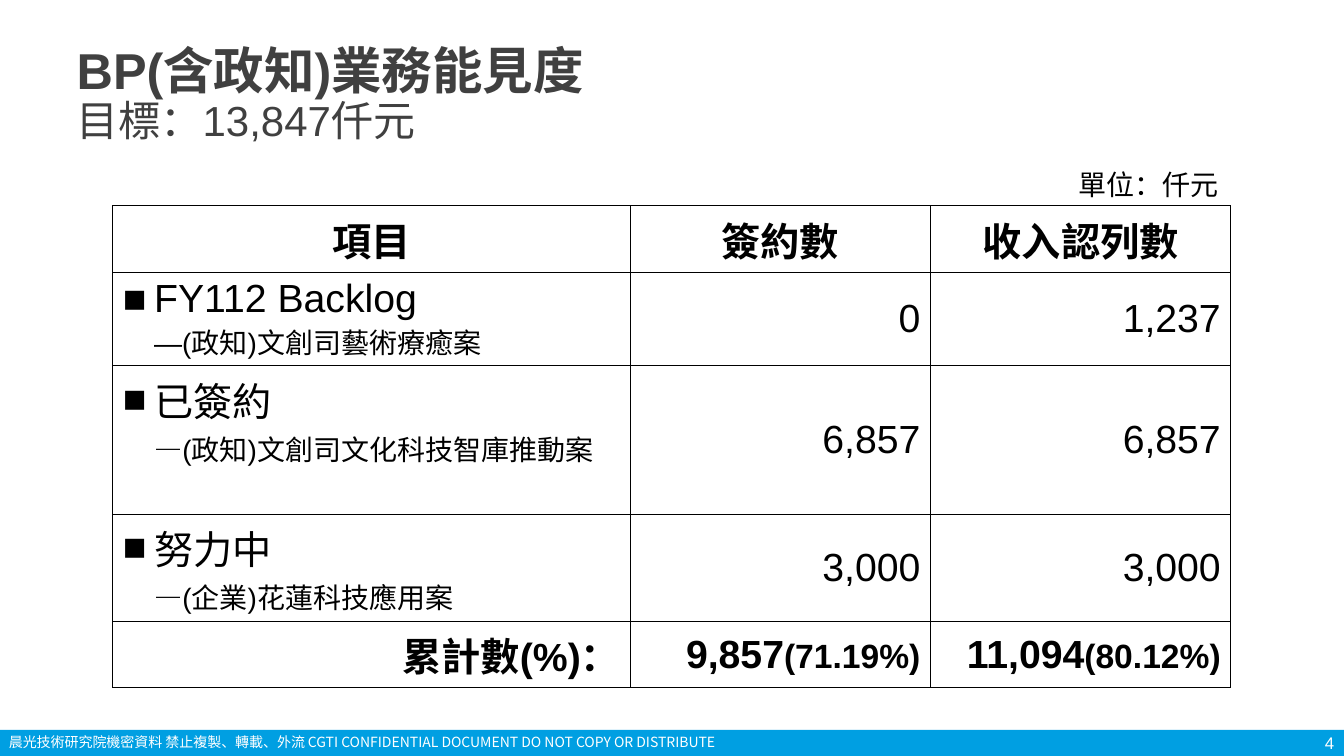
from lxml import etree
from pptx import Presentation, util as u
from pptx.dml.color import RGBColor
from pptx.enum import shapes, text
from pptx.oxml import ns

ALIGN = text.PP_ALIGN
ANCHOR = text.MSO_ANCHOR
BLACK, WHITE, GREY, BLUE = "000000", "FFFFFF", "404040", "009FE2"


def color(value):
    return RGBColor.from_string(value)


class SlideBuilder:
    """Places elements by percentages of the slide's width and height."""

    font = "Arial"

    def __init__(self, presentation):
        self.width = presentation.slide_width
        self.height = presentation.slide_height
        self.slide = presentation.slides.add_slide(presentation.slide_layouts[5])

    def x(self, percent):
        return u.Emu(round(self.width * percent / 100))

    def y(self, percent):
        return u.Emu(round(self.height * percent / 100))

    def area(self, left, top, width, height):
        return self.x(left), self.y(top), self.x(width), self.y(height)

    def add_runs(self, paragraph, runs, ink=BLACK, align=ALIGN.LEFT, font=None):
        """Each run is (words, size, bold); a newline becomes a line break."""
        paragraph.alignment = align
        paragraph.font.name = font or self.font
        paragraph.font.color.rgb = color(ink)
        for words, size, bold in runs:
            run = paragraph.add_run()
            run.text = words.rstrip("\n")
            style = paragraph.font if len(runs) == 1 else run.font
            style.size, style.bold = u.Pt(size), bold
            if words.endswith("\n"):
                paragraph.add_line_break()

    def title(self, area, runs):
        shape = self.slide.shapes.title
        shape.left, shape.top, shape.width, shape.height = self.area(*area)
        frame = shape.text_frame
        frame.auto_size = text.MSO_AUTO_SIZE.NONE
        frame.vertical_anchor = ANCHOR.MIDDLE
        frame.paragraphs[0].line_spacing = 0.9
        self.add_runs(frame.paragraphs[0], runs, GREY)

    def bar(self, area, fill):
        shape = self.slide.shapes.add_shape(
            shapes.MSO_SHAPE.RECTANGLE, *self.area(*area))
        shape.shadow.inherit = False
        shape.fill.solid()
        shape.fill.fore_color.rgb = color(fill)
        shape.line.fill.background()

    def label(self, area, words, size, ink, align=ALIGN.LEFT,
              anchor=ANCHOR.TOP, wrap=True, font=None):
        frame = self.slide.shapes.add_textbox(*self.area(*area)).text_frame
        frame.word_wrap = wrap
        frame.vertical_anchor = anchor
        self.add_runs(frame.paragraphs[0], [(words, size, False)], ink, align, font)

    def bullet(self, paragraph, character, indent):
        properties = paragraph._p.get_or_add_pPr()
        properties.set("marL", str(indent))
        properties.set("indent", str(-indent))
        etree.SubElement(properties, ns.qn("a:buFont"), typeface=self.font)
        etree.SubElement(properties, ns.qn("a:buChar"), char=character)

    def border(self, cell, ink, weight):
        properties = cell._tc.get_or_add_tcPr()
        for side in ("lnL", "lnR", "lnT", "lnB"):
            line = etree.SubElement(properties, ns.qn("a:" + side), w=str(u.Pt(weight)))
            fill = etree.SubElement(line, ns.qn("a:solidFill"))
            etree.SubElement(fill, ns.qn("a:srgbClr"), val=ink)

    def table(self, left, top, columns, rows, cells):
        area = self.area(left, top, sum(columns), sum(rows))
        table = self.slide.shapes.add_table(len(rows), len(columns), *area).table
        table.first_row = table.horz_banding = False
        for column, width in zip(table.columns, columns):
            column.width = self.x(width)
        for row, height, contents in zip(table.rows, rows, cells):
            row.height = self.y(height)
            for cell, (runs, align) in zip(row.cells, contents):
                self.border(cell, BLACK, 0.75)
                cell.fill.background()
                paragraph = cell.text_frame.paragraphs[0]
                if align == ALIGN.LEFT:
                    self.bullet(paragraph, "■", u.Inches(0.31))
                else:
                    cell.vertical_anchor = ANCHOR.MIDDLE
                self.add_runs(paragraph, runs, align=align)


def header(words):
    return [(words, 28, True)], ALIGN.CENTER


def item(name, detail):
    return [(name + "\n", 28, False), (detail, 20, False)], ALIGN.LEFT


def amount(words):
    return [(words, 28, False)], ALIGN.RIGHT


def total(words, share=None):
    runs = [(words, 28, True)]
    if share:
        runs.append((share, 24, True))
    return runs, ALIGN.RIGHT


def main():
    presentation = Presentation()
    presentation.slide_width = u.Inches(13.33)
    presentation.slide_height = u.Inches(7.5)
    builder = SlideBuilder(presentation)

    # Footer band
    builder.bar((0, 96.53, 100, 3.47), BLUE)
    builder.label((-0.08, 96.4, 58.42, 3.6),
                  "晨光技術研究院機密資料 禁止複製、轉載、外流 "
                  "CGTI CONFIDENTIAL DOCUMENT DO NOT COPY OR DISTRIBUTE",
                  10, WHITE, font="Noto Sans CJK SC")
    builder.label((93.77, 96.53, 6.23, 3.47), "4", 12, WHITE,
                  ALIGN.RIGHT, ANCHOR.MIDDLE)

    # Title with the target
    builder.title((4.95, 3.87, 90.6, 17.6),
                  [("BP(含政知)業務能見度\n", 36, True),
                   ("目標：13,847仟元", 30, False)])

    # Table of contracts and recognised income
    builder.table(8.4, 27.2, [38.48, 22.35, 22.35], [8.8, 12.4, 19.6, 14.2, 8.8], [
        [header("項目"), header("簽約數"), header("收入認列數")],
        [item("FY112 Backlog", "—(政知)文創司藝術療癒案"),
         amount("0"), amount("1,237")],
        [item("已簽約", "—(政知)文創司文化科技智庫推動案"),
         amount("6,857"), amount("6,857")],
        [item("努力中", "—(企業)花蓮科技應用案"),
         amount("3,000"), amount("3,000")],
        [total("累計數(%)："), total("9,857", "(71.19%)"),
         total("11,094", "(80.12%)")],
    ])

    # Unit of the amounts
    builder.label((79.5, 21.47, 12, 5.87), "單位：仟元", 20, BLACK, wrap=False)

    presentation.save("out.pptx")


if __name__ == "__main__":
    main()
